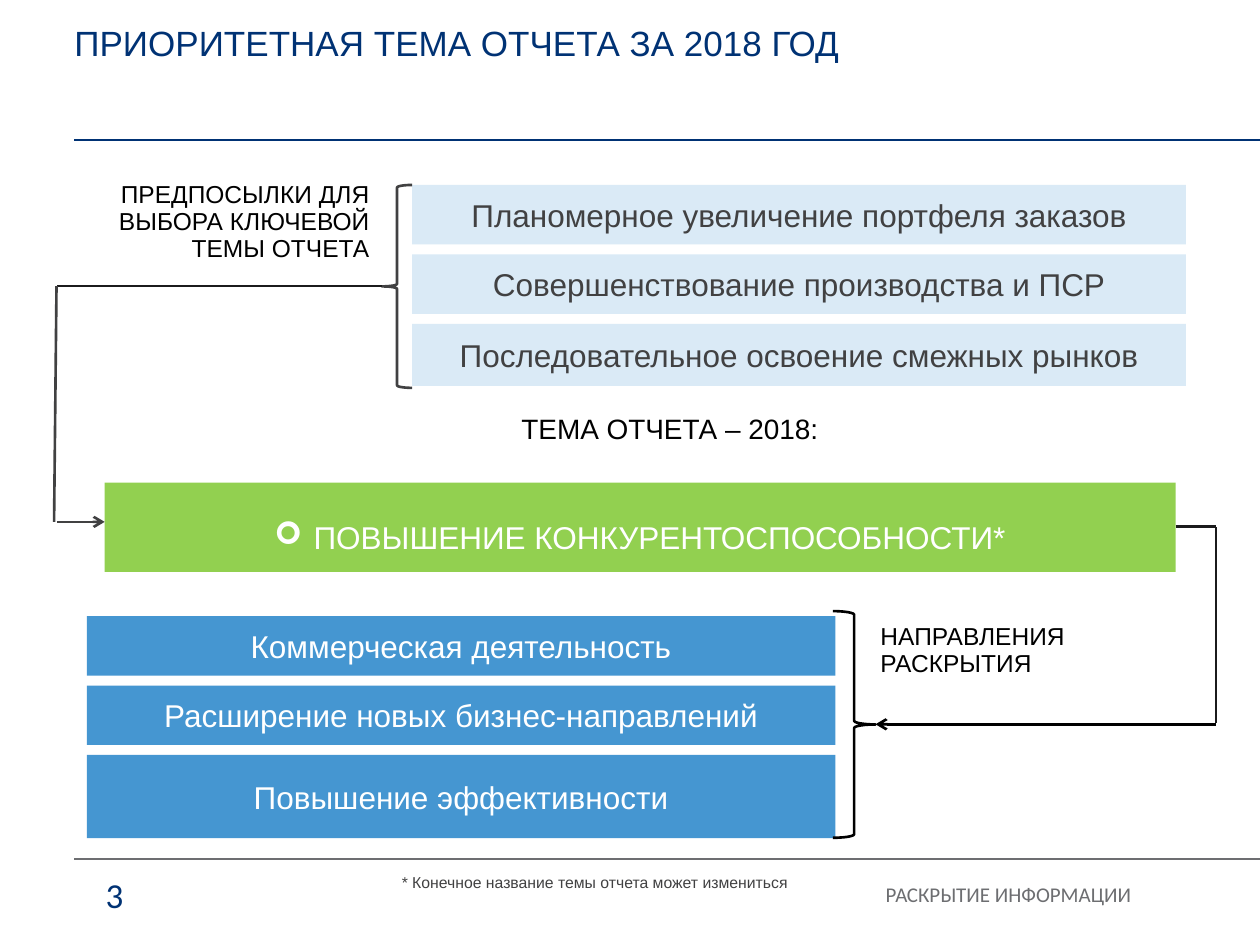
from lxml.etree import SubElement
from pptx import Presentation
from pptx.dml.color import RGBColor
from pptx.enum.shapes import MSO_CONNECTOR, MSO_SHAPE
from pptx.enum.text import MSO_ANCHOR, MSO_AUTO_SIZE, PP_ALIGN
from pptx.oxml.ns import qn
from pptx.util import Cm, Pt

NAVY = RGBColor(0x00, 0x32, 0x74)
GREY = RGBColor(0x6D, 0x6E, 0x71)
DARK = RGBColor(0x41, 0x41, 0x42)
INK = RGBColor(0x1B, 0x1B, 0x1C)
BLACK = RGBColor(0x00, 0x00, 0x00)
WHITE = RGBColor(0xFF, 0xFF, 0xFF)
PALE = RGBColor(0xDA, 0xEA, 0xF6)
BLUE = RGBColor(0x45, 0x96, 0xD1)
GREEN = RGBColor(0x92, 0xD0, 0x50)


def set_text(sp, text, size, color, align, font="Arial", anchor=MSO_ANCHOR.TOP):
    tf = sp.text_frame
    tf.text = text
    tf.word_wrap = True
    tf.auto_size = MSO_AUTO_SIZE.NONE
    tf.vertical_anchor = anchor
    p = tf.paragraphs[0]
    p.alignment = align
    p.space_before = Pt(0)
    f = p.runs[0].font
    f.name, f.size, f.color.rgb = font, Pt(size), color
    return p


def add_bar(x, y, w, h, fill, text, color):
    sp = s.shapes.add_shape(MSO_SHAPE.RECTANGLE, Cm(x), Cm(y), Cm(w), Cm(h))
    sp.shadow.inherit = False
    sp.fill.solid()
    sp.fill.fore_color.rgb = fill
    sp.line.fill.background()
    return set_text(sp, text, 18, color, PP_ALIGN.CENTER, anchor=MSO_ANCHOR.MIDDLE)


prs = Presentation()
prs.slide_width, prs.slide_height = Cm(25.4), Cm(19.05)
s = prs.slides.add_slide(prs.slide_layouts[1])

# Title and section name
title, section = s.shapes.title, s.placeholders[1]
title.left, title.top, title.width, title.height = Cm(1.5), Cm(0.33), Cm(22.86), Cm(2.39)
section.left, section.top, section.width, section.height = Cm(8.51), Cm(17.81), Cm(14.3), Cm(1.17)
set_text(title, "ПРИОРИТЕТНАЯ ТЕМА ОТЧЕТА ЗА 2018 ГОД", 20, NAVY, PP_ALIGN.LEFT)
p = set_text(section, "РАСКРЫТИЕ ИНФОРМАЦИИ", 12, GREY, PP_ALIGN.RIGHT, "Calibri")
p.line_spacing = Pt(13)
pPr = p._p.get_or_add_pPr()
pPr.set("marL", "0")
pPr.set("indent", "0")
SubElement(pPr, qn("a:buNone"))
for sp, inset in ((title, 0.1), (section, 0)):
    tf = sp.text_frame
    tf.margin_left = tf.margin_right = 0
    tf.margin_top = tf.margin_bottom = Cm(inset)

# Prerequisites and disclosure areas: stacked bars
stacks = [
    (8.31, 3.73, 15.6, PALE, DARK, [
        ("Планомерное увеличение портфеля заказов", 1.2),
        ("Совершенствование производства и ПСР", 1.2),
        ("Последовательное освоение смежных рынков", 1.25)]),
    (1.75, 12.42, 15.09, BLUE, WHITE, [
        ("Коммерческая деятельность", 1.2),
        ("Расширение новых бизнес-направлений", 1.2),
        ("Повышение эффективности", 1.68)]),
]
for x, y, w, fill, color, rows in stacks:
    for i, (text, h) in enumerate(rows):
        add_bar(x, y + 1.4 * i, w, h, fill, text, color)

# Report theme
p = add_bar(2.11, 9.73, 21.59, 1.8, GREEN, "ПОВЫШЕНИЕ КОНКУРЕНТОСПОСОБНОСТИ*", WHITE)
p.line_spacing = 1.5
pPr = p._p.get_or_add_pPr()
pPr.set("marL", str(Cm(0.79)))
pPr.set("indent", str(-Cm(0.79)))
SubElement(pPr, qn("a:buFont"), typeface="Wingdings")
SubElement(pPr, qn("a:buChar"), char="➢")

# Braces
for kind, x, y, w, h, color in [
    (MSO_SHAPE.LEFT_BRACE, 7.7, 3.73, 0.61, 4.09, DARK),
    (MSO_SHAPE.RIGHT_BRACE, 16.79, 12.32, 0.86, 4.57, BLACK),
]:
    sp = s.shapes.add_shape(kind, Cm(x), Cm(y), Cm(w), Cm(h))
    sp.shadow.inherit = False
    sp.fill.background()
    sp.line.color.rgb = color
    sp.line.width = Pt(1.5)

# Rules and connecting lines
for x1, y1, x2, y2, color, width, arrow in [
    (1.5, 2.82, 25.4, 2.82, NAVY, 1, False),
    (1.5, 17.32, 25.4, 17.32, GREY, 1, False),
    (7.7, 5.77, 1.14, 5.77, INK, 1.5, False),
    (1.14, 5.77, 1.09, 10.52, DARK, 1.5, False),
    (1.14, 10.52, 2.11, 10.52, DARK, 1.5, True),
    (23.7, 10.62, 24.51, 10.62, INK, 1.5, False),
    (24.51, 14.58, 24.51, 10.62, INK, 1.5, False),
    (24.51, 14.6, 17.65, 14.6, BLACK, 1.5, True),
]:
    ln = s.shapes.add_connector(MSO_CONNECTOR.STRAIGHT, Cm(x1), Cm(y1), Cm(x2), Cm(y2))
    ln.line.color.rgb = color
    ln.line.width = Pt(width)
    if arrow:
        SubElement(ln.line._get_or_add_ln(), qn("a:tailEnd"), type="arrow")
    SubElement(ln._element.spPr, qn("a:effectLst"))

# Captions
for x, y, w, h, text, size, align in [
    (1.7, 3.53, 6, 1.96, "ПРЕДПОСЫЛКИ ДЛЯ ВЫБОРА КЛЮЧЕВОЙ ТЕМЫ ОТЧЕТА", 14, PP_ALIGN.RIGHT),
    (9.3, 8.23, 8.41, 0.89, "ТЕМА ОТЧЕТА – 2018:", 16, PP_ALIGN.CENTER),
    (17.5, 12.45, 5.41, 1.4, "НАПРАВЛЕНИЯ РАСКРЫТИЯ", 14, PP_ALIGN.LEFT),
]:
    sp = s.shapes.add_textbox(Cm(x), Cm(y), Cm(w), Cm(h))
    set_text(sp, text, size, BLACK, align).line_spacing = 0.93

# Footnote and page number
sp = s.shapes.add_textbox(Cm(8.1), Cm(17.6), Cm(14.6), Cm(1.32))
set_text(sp, "* Конечное название темы отчета может измениться", 9, DARK, PP_ALIGN.LEFT)
tf = sp.text_frame
tf.margin_left = tf.margin_right = tf.margin_top = tf.margin_bottom = 0
sp = s.shapes.add_textbox(Cm(0.94), Cm(17.53), Cm(1.8), Cm(1))
set_text(sp, "3", 20, NAVY, PP_ALIGN.RIGHT, "Calibri", MSO_ANCHOR.MIDDLE)

prs.save("out.pptx")
